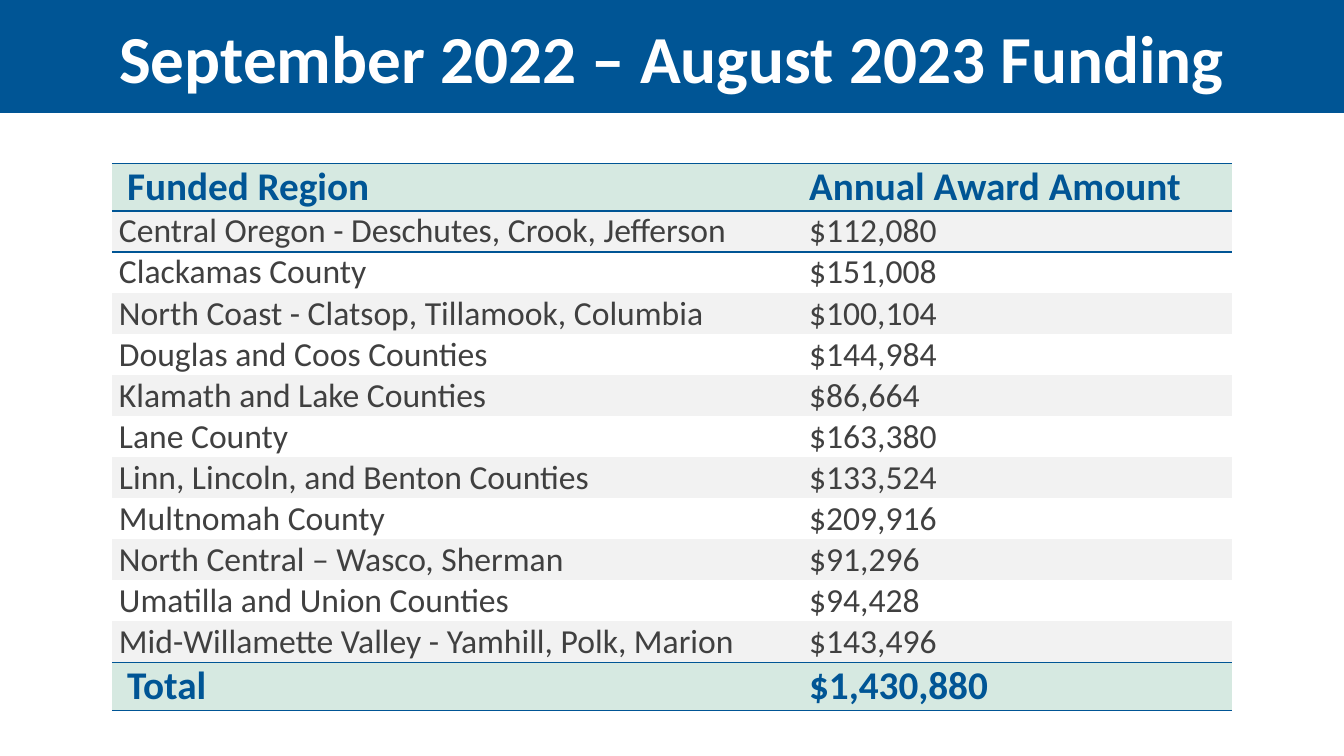
from pptx import Presentation
from pptx.dml.color import RGBColor
from pptx.enum.shapes import MSO_SHAPE
from pptx.enum.text import MSO_ANCHOR, MSO_AUTO_SIZE, PP_ALIGN
from pptx.util import Pt
from lxml.etree import SubElement
from pptx.oxml.ns import qn

# Content
TITLE = "September 2022 – August 2023 Funding"
HEAD = ("Funded Region", "Annual Award Amount")
AWARDS = [
    ("Central Oregon - Deschutes, Crook, Jefferson", "$112,080"),
    ("Clackamas County", "$151,008"),
    ("North Coast - Clatsop, Tillamook, Columbia", "$100,104"),
    ("Douglas and Coos Counties", "$144,984"),
    ("Klamath and Lake Counties", "$86,664"),
    ("Lane County", "$163,380"),
    ("Linn, Lincoln, and Benton Counties", "$133,524"),
    ("Multnomah County", "$209,916"),
    ("North Central – Wasco, Sherman", "$91,296"),
    ("Umatilla and Union Counties", "$94,428"),
    ("Mid-Willamette Valley - Yamhill, Polk, Marion", "$143,496"),
]
TOTAL = ("Total", "$1,430,880")


class Theme:
    font = "Calibri"
    blue = RGBColor.from_string("005595")
    mint = RGBColor.from_string("D6E9E1")
    gray = RGBColor.from_string("F2F2F2")
    ink = RGBColor.from_string("404040")
    white = RGBColor.from_string("FFFFFF")
    title, head, body = 48, 28, 24
    plain = "{2D5ABB26-0587-4C30-8999-92F81FD0307C}"  # no style, no grid


# Layout, in points
WIDE, HIGH = 960, 540
BAND = 80.6
LEFT, TOP = 80, 116.5
COLS = (493, 307)
TALL, LOW = 34.2, 29.3


def write(para, text, size, color, bold):
    run = para.add_run()
    run.text = text
    font = run.font
    font.name, font.size, font.bold = Theme.font, Pt(size), bold
    font.color.rgb = color


def rule(cell, *sides):
    """Draw thin blue borders; they must come before the cell fill."""
    props = cell._tc.get_or_add_tcPr()
    for spot, side in enumerate(sides):
        line = SubElement(props, qn("a:" + side), w=str(Pt(1)))
        fill = SubElement(line, qn("a:solidFill"))
        SubElement(fill, qn("a:srgbClr"), val=str(Theme.blue))
        props.insert(spot, line)


def paint(cell, color):
    if color is None:
        cell.fill.background()
    else:
        cell.fill.solid()
        cell.fill.fore_color.rgb = color


def add_title(slide):
    # Band behind the title
    band = slide.shapes.add_shape(MSO_SHAPE.RECTANGLE, 0, 0, Pt(WIDE), Pt(BAND))
    band.shadow.inherit = False
    band.fill.solid()
    band.fill.fore_color.rgb = Theme.blue
    band.line.fill.background()

    # Title text, in front of the band
    title = slide.shapes.title
    band._element.addnext(title._element)
    title.left, title.top = 0, Pt(0.7)
    title.width, title.height = Pt(WIDE), Pt(BAND - 0.7)
    frame = title.text_frame
    frame.word_wrap, frame.auto_size = True, MSO_AUTO_SIZE.NONE
    frame.vertical_anchor = MSO_ANCHOR.MIDDLE
    para = frame.paragraphs[0]
    para.alignment = PP_ALIGN.CENTER
    write(para, TITLE, Theme.title, Theme.white, True)


def add_awards(slide):
    rows = [HEAD, *AWARDS, TOTAL]
    last = len(rows) - 1
    full = 2 * TALL + len(AWARDS) * LOW
    table = slide.shapes.add_table(
        len(rows), len(COLS), Pt(LEFT), Pt(TOP), Pt(sum(COLS)), Pt(full)
    ).table
    table._tbl.tblPr.find(qn("a:tableStyleId")).text = Theme.plain
    table.first_row = table.horz_banding = False
    for col, width in zip(table.columns, COLS):
        col.width = Pt(width)

    for r, row in enumerate(rows):
        edge = r in (0, last)
        table.rows[r].height = Pt(TALL if edge else LOW)
        for c, text in enumerate(row):
            cell = table.cell(r, c)
            cell.margin_left = cell.margin_right = Pt(5)
            cell.margin_top = cell.margin_bottom = 0
            para = cell.text_frame.paragraphs[0]
            if edge:
                # Heading and total rows
                cell.vertical_anchor = MSO_ANCHOR.MIDDLE
                if c == 0:
                    para._p.get_or_add_pPr().set("marL", str(Pt(5.8)))
                write(para, text, Theme.head, Theme.blue, True)
                paint(cell, Theme.mint)
                rule(cell, "lnT", "lnB")
            else:
                # Banded region rows
                para.space_before = para.space_after = Pt(3)
                write(para, text, Theme.body, Theme.ink, False)
                paint(cell, Theme.gray if r % 2 else None)
                if r == 1:
                    rule(cell, "lnT")
                elif r == last - 1:
                    rule(cell, "lnB")


def main():
    deck = Presentation()
    deck.slide_width, deck.slide_height = Pt(WIDE), Pt(HIGH)
    slide = deck.slides.add_slide(deck.slide_layouts[5])
    add_title(slide)
    add_awards(slide)
    deck.save("out.pptx")


if __name__ == "__main__":
    main()
